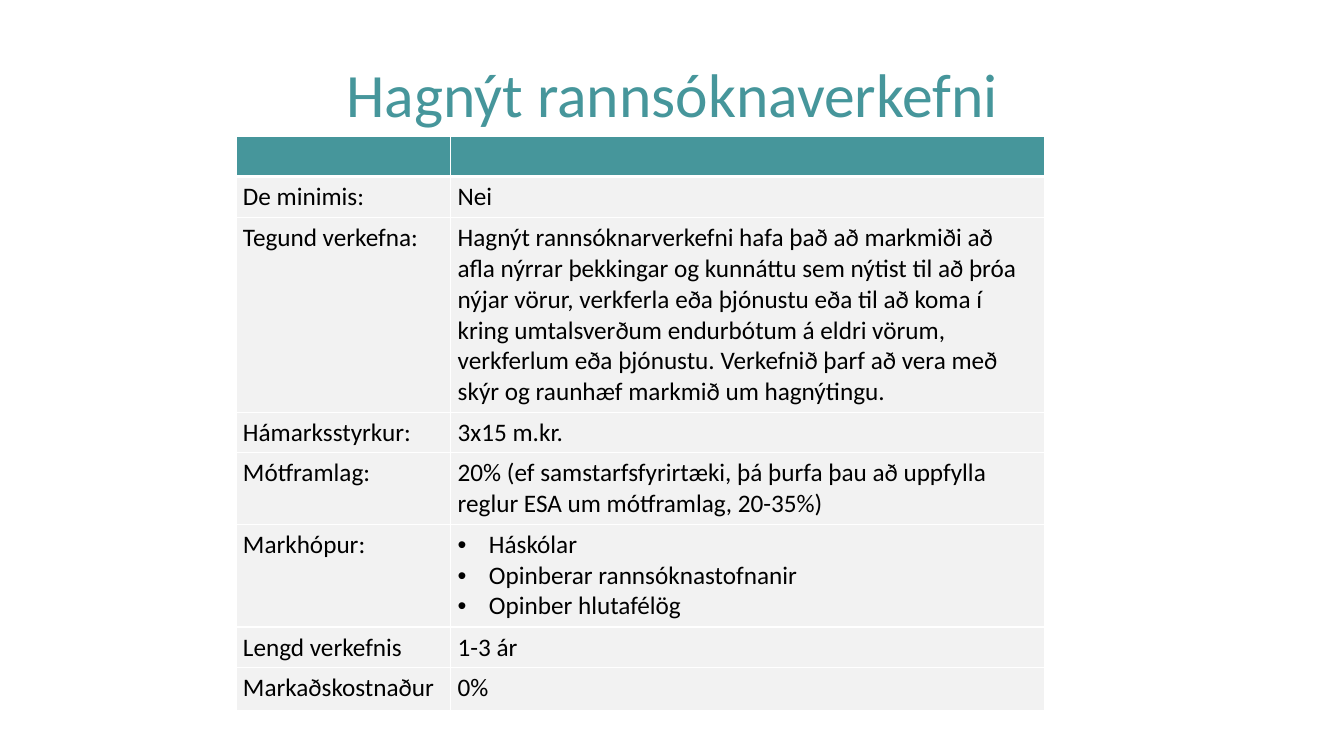
"""Build a slide with a titled table describing applied research projects."""
import pptx
import pptx.dml.color
import pptx.enum.text
import pptx.oxml
import pptx.oxml.ns
import pptx.util
from dataclasses import dataclass


@dataclass(frozen=True)
class Theme:
    teal: str = "46969B"
    grey: str = "F2F2F2"
    white: str = "FFFFFF"
    black: str = "000000"
    font: str = "Calibri"
    title_size: int = 44
    body_size: int = 18


theme = Theme()
PX = 9144
BULLET_INDENT = 31 * PX


def format_runs(para, size, color):
    for span in para.runs:
        span.font.name = theme.font
        span.font.size = pptx.util.Pt(size)
        span.font.color.rgb = pptx.dml.color.RGBColor.from_string(color)


def set_borders(cell, widths):
    properties = cell._tc.get_or_add_tcPr()
    for position, (side, points) in enumerate(widths.items()):
        line = pptx.oxml.parse_xml(
            f'<a:ln{side} {pptx.oxml.ns.nsdecls("a")} w="{pptx.util.Pt(points)}">'
            f'<a:solidFill><a:srgbClr val="{theme.white}"/></a:solidFill></a:ln{side}>')
        properties.insert(position, line)


project_rows = [
    (40, "", [""]),
    (41, "De minimis:", ["Nei"]),
    (193, "Tegund verkefna:", [
        "Hagnýt rannsóknarverkefni hafa það að markmiði að afla nýrrar þekkingar "
        "og kunnáttu sem nýtist til að þróa nýjar vörur, verkferla eða þjónustu "
        "eða til að koma í kring umtalsverðum endurbótum á eldri vörum, "
        "verkferlum eða þjónustu. Verkefnið þarf að vera með skýr og raunhæf "
        "markmið um hagnýtingu."]),
    (40, "Hámarksstyrkur:", ["3x15 m.kr."]),
    (71, "Mótframlag:", [
        "20% (ef samstarfsfyrirtæki, þá þurfa þau að uppfylla reglur ESA um "
        "mótframlag, 20-35%)"]),
    (102, "Markhópur:", ["Háskólar", "Opinberar rannsóknastofnanir", "Opinber hlutafélög"]),
    (40, "Lengd verkefnis", ["1-3 ár"]),
    (43, "Markaðskostnaður", ["0%"]),
]

deck = pptx.Presentation()
deck.slide_width, deck.slide_height = 1333 * PX, 750 * PX
page = deck.slides.add_slide(deck.slide_layouts[6])

title = page.shapes.add_textbox(67 * PX, 30 * PX, 1200 * PX, 125 * PX)
title.fill.solid()
title.fill.fore_color.rgb = pptx.dml.color.RGBColor.from_string(theme.white)
title.text_frame.word_wrap = True
title.text_frame.vertical_anchor = pptx.enum.text.MSO_ANCHOR.MIDDLE
title.text_frame.text = "Hagnýt rannsóknaverkefni"
heading = title.text_frame.paragraphs[0]
heading.alignment = pptx.enum.text.PP_ALIGN.CENTER
format_runs(heading, theme.title_size, theme.teal)

table = page.shapes.add_table(
    len(project_rows), 2, 234 * PX, 135 * PX, 802 * PX, 570 * PX).table
table.first_row = False
table.horz_banding = False
for column, width in zip(table.columns, (213, 589)):
    column.width = width * PX

for row_index, (height, label, details) in enumerate(project_rows):
    table.rows[row_index].height = height * PX
    is_header = row_index == 0
    for column_index, lines in enumerate(([label], details)):
        cell = table.cell(row_index, column_index)
        cell.margin_left = 7 * PX
        cell.margin_right = 9 * PX
        cell.margin_top = cell.margin_bottom = 5 * PX
        cell.fill.solid()
        cell.fill.fore_color.rgb = pptx.dml.color.RGBColor.from_string(
            theme.teal if is_header else theme.grey)
        set_borders(cell, {"L": 1, "R": 1, "T": 3 if row_index == 1 else 1,
                           "B": 3 if is_header else 1})
        cell.text_frame.text = "\n".join(lines)
        for para in cell.text_frame.paragraphs:
            if len(lines) > 1:
                settings = para._p.get_or_add_pPr()
                settings.set("marL", str(BULLET_INDENT))
                settings.set("indent", str(-BULLET_INDENT))
                settings.append(pptx.oxml.parse_xml(
                    f'<a:buFont {pptx.oxml.ns.nsdecls("a")} typeface="Arial"/>'))
                settings.append(pptx.oxml.parse_xml(
                    f'<a:buChar {pptx.oxml.ns.nsdecls("a")} char="•"/>'))
            format_runs(para, theme.body_size, theme.black)

deck.save("out.pptx")
